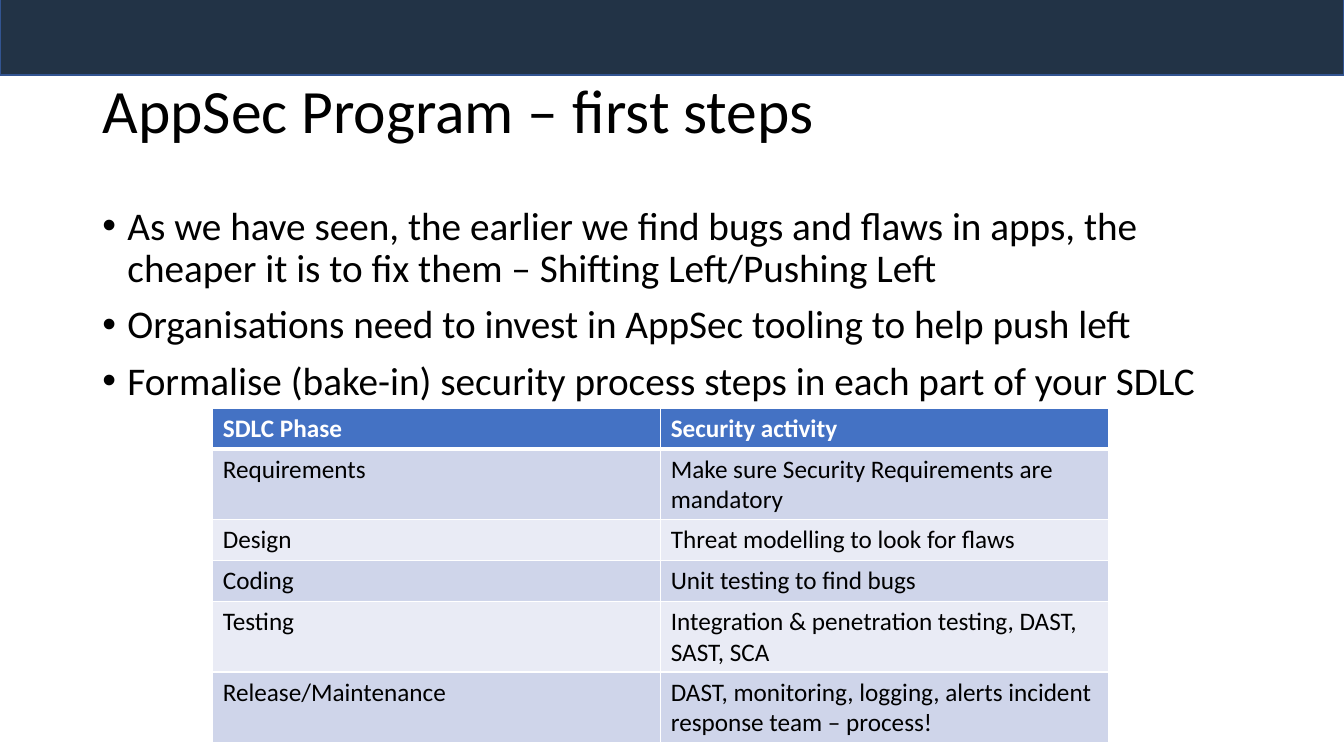
"""Build the slide on the first steps of an AppSec program."""
from dataclasses import dataclass

from lxml import etree
from pptx import Presentation
from pptx.dml.color import RGBColor
from pptx.enum import shapes, text
from pptx.oxml.ns import qn
from pptx.util import Pt

TITLE = "AppSec Program – first steps"
STEPS = [
    "As we have seen, the earlier we find bugs and flaws in apps, the cheaper it is "
    "to fix them – Shifting Left/Pushing Left",
    "Organisations need to invest in AppSec tooling to help push left",
    "Formalise (bake-in) security process steps in each part of your SDLC",
]
ACTIVITIES = [
    ("SDLC Phase", "Security activity"),
    ("Requirements", "Make sure Security Requirements are mandatory"),
    ("Design", "Threat modelling to look for flaws"),
    ("Coding", "Unit testing to find bugs"),
    ("Testing", "Integration & penetration testing, DAST, SAST, SCA"),
    ("Release/Maintenance", "DAST, monitoring, logging, alerts incident response team – process!"),
]


@dataclass(frozen=True)
class Theme:
    """Fonts, type sizes and colours of the slide."""
    font: str = "Calibri"
    title_size: int = 44
    step_size: int = 28
    table_size: int = 18
    ink: str = "000000"
    paper: str = "FFFFFF"
    band: str = "223346"
    band_line: str = "325491"
    header: str = "4472C4"
    stripes: tuple = ("CFD5EA", "E9EBF5")


THEME = Theme()
WIDTH, HEIGHT = 960, 540
BAND = (0, -2.5, WIDTH, 56)
TITLE_BOX = (66, 28.75, 828, 104.4)
STEPS_BOX = (66, 143.75, 828, 342.6)
TABLE_LEFT, TABLE_TOP, COLUMN, ROW = 152, 291.6, 320, 29.2
STEP_INDENT = 18


def color(code):
    """Turn a hex code into a colour."""
    return RGBColor.from_string(code)


def style(paragraph, size, code, bold=False):
    """Format every run of a paragraph."""
    for run in paragraph.runs:
        run.font.name, run.font.size, run.font.bold = THEME.font, Pt(size), bold
        run.font.color.rgb = color(code)


def place(shape, box):
    """Move and size a shape."""
    shape.left, shape.top, shape.width, shape.height = map(Pt, box)


def add_bullet(paragraph):
    """Give a paragraph a hanging round bullet."""
    properties = paragraph._p.get_or_add_pPr()
    properties.set("marL", str(Pt(STEP_INDENT)))
    properties.set("indent", str(-Pt(STEP_INDENT)))
    etree.SubElement(properties, qn("a:buFont")).set("typeface", "Arial")
    etree.SubElement(properties, qn("a:buChar")).set("char", "•")


def add_borders(cell, top, bottom):
    """Draw the cell's borders, one point wide at the sides."""
    properties = cell._tc.get_or_add_tcPr()
    sides = {"a:lnL": 1, "a:lnR": 1, "a:lnT": top, "a:lnB": bottom}
    for position, (side, width) in enumerate(sides.items()):
        line = etree.Element(qn(side), w=str(Pt(width)))
        fill = etree.SubElement(line, qn("a:solidFill"))
        etree.SubElement(fill, qn("a:srgbClr")).set("val", THEME.paper)
        properties.insert(position, line)


def add_band(slide):
    """Draw the dark band along the top."""
    band = slide.shapes.add_shape(shapes.MSO_SHAPE.RECTANGLE, *map(Pt, BAND))
    band.shadow.inherit = False
    band.fill.solid()
    band.fill.fore_color.rgb = color(THEME.band)
    band.line.color.rgb = color(THEME.band_line)
    band.line.width = Pt(1)


def fill_title(slide):
    """Write the title in its placeholder."""
    title = slide.shapes.title
    place(title, TITLE_BOX)
    frame = title.text_frame
    frame.text = TITLE
    frame.auto_size = text.MSO_AUTO_SIZE.NONE
    frame.vertical_anchor = text.MSO_ANCHOR.MIDDLE
    heading = frame.paragraphs[0]
    heading.alignment = text.PP_ALIGN.LEFT
    heading.line_spacing = 0.9
    style(heading, THEME.title_size, THEME.ink)


def add_steps(slide):
    """Write the bulleted steps."""
    frame = slide.shapes.add_textbox(*map(Pt, STEPS_BOX)).text_frame
    frame.word_wrap = True
    frame.text = "\n".join(STEPS)
    for number, step in enumerate(frame.paragraphs):
        add_bullet(step)
        step.line_spacing = 0.9
        step.space_before = Pt(10 if number else 0)
        style(step, THEME.step_size, THEME.ink)


def add_activities(slide):
    """Build the table of security activities by phase."""
    rows, columns = len(ACTIVITIES), len(ACTIVITIES[0])
    box = (TABLE_LEFT, TABLE_TOP, columns * COLUMN, rows * ROW)
    table = slide.shapes.add_table(rows, columns, *map(Pt, box)).table
    for r, activity in enumerate(ACTIVITIES):
        header = r == 0
        for c, words in enumerate(activity):
            cell = table.cell(r, c)
            cell.text = words
            cell.fill.solid()
            cell.fill.fore_color.rgb = color(THEME.header if header else THEME.stripes[(r - 1) % 2])
            add_borders(cell, top=3 if r == 1 else 1, bottom=3 if header else 1)
            style(cell.text_frame.paragraphs[0], THEME.table_size,
                  THEME.paper if header else THEME.ink, header)


def main():
    """Assemble and save the slide."""
    deck = Presentation()
    deck.slide_width, deck.slide_height = Pt(WIDTH), Pt(HEIGHT)
    slide = deck.slides.add_slide(deck.slide_layouts[5])
    add_band(slide)
    fill_title(slide)
    add_steps(slide)
    add_activities(slide)
    deck.save("out.pptx")


if __name__ == "__main__":
    main()
